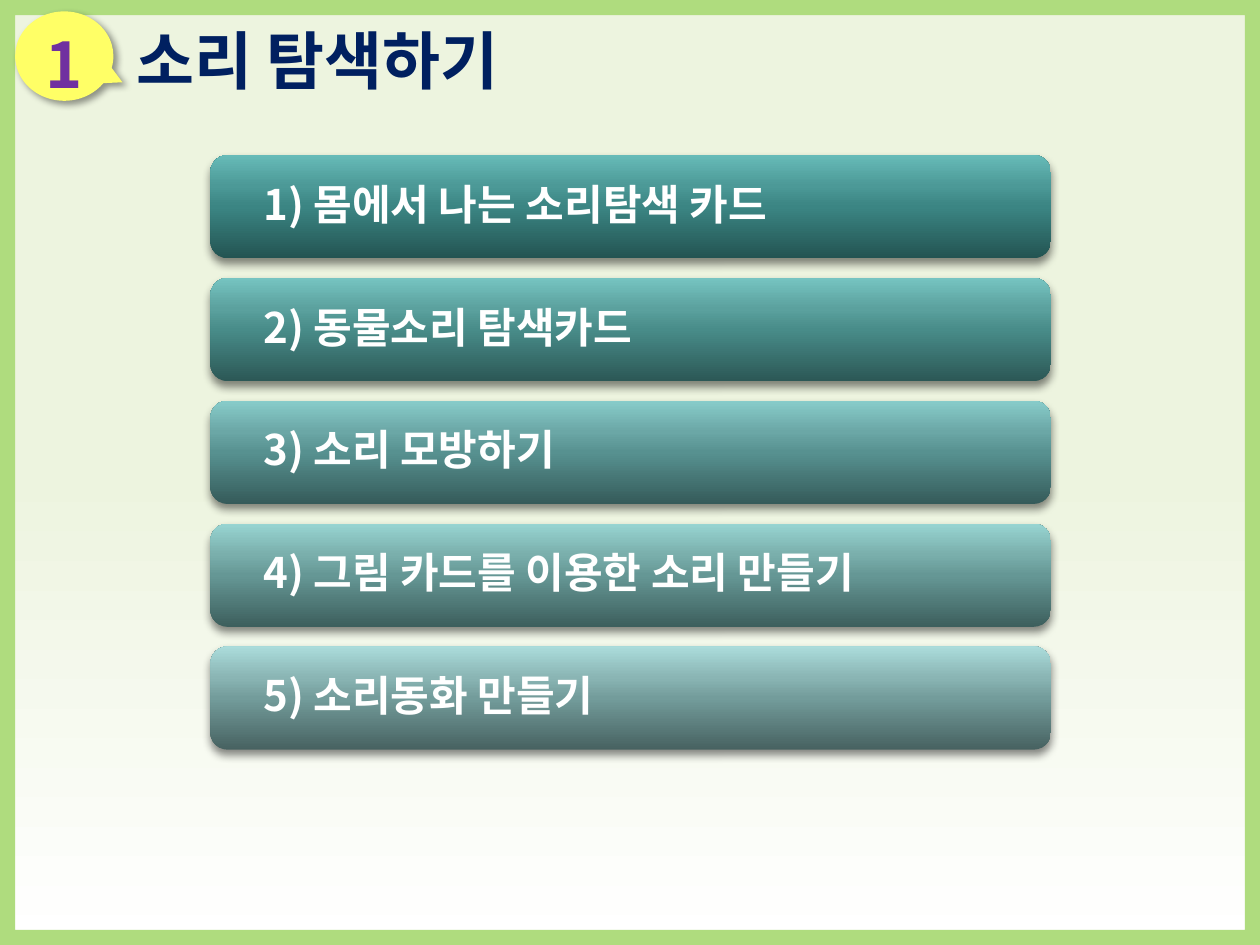
import pptx
import pptx.util
import pptx.dml.color
import pptx.enum.shapes
import pptx.enum.text
import pptx.oxml
import pptx.oxml.ns
from lxml import etree

Inches = pptx.util.Inches
SHAPE = pptx.enum.shapes.MSO_SHAPE
ALIGN = pptx.enum.text.PP_ALIGN
FONT = "Noto Sans CJK KR"
COLORS = {"white": "FFFFFF", "mist": "EDF4DF", "frame": "AFDC7E", "navy": "002060",
          "yellow": "FFFF66", "purple": "7030A0", "shadow": "000000"}

# Each bar: its text and its gradient from bottom to top
STOPS = (0, 50, 70, 100)
BARS = [
    ("1) 몸에서 나는 소리탐색 카드", ("235452", "3B8583", "4C9997", "67BBB8")),
    ("2) 동물소리 탐색카드", ("2C5856", "488C89", "5BA19E", "76C4C1")),
    ("3) 소리 모방하기", ("355B5A", "579190", "6BA7A6", "88CCCA")),
    ("4) 그림 카드를 이용한 소리 만들기", ("3D5F5D", "659795", "7AAFAC", "98D5D2")),
    ("5) 소리동화 만들기", ("476261", "739C9B", "8AB5B4", "ABDCDB")),
]


def add_shape(kind, left, top, width, height, stops, shadow=None):
    """Add a lineless shape with an upward gradient or, for one stop, a solid fill."""
    shape = page.shapes.add_shape(kind, Inches(left), Inches(top), Inches(width), Inches(height))
    shape.line.fill.background()
    shape.shadow.inherit = False
    if len(stops) == 1:
        shape.fill.solid()
        shape.fill.fore_color.rgb = pptx.dml.color.RGBColor.from_string(stops[0][1])
    else:
        marks = "".join(f'<a:gs pos="{place * 1000}"><a:srgbClr val="{color}"/></a:gs>'
                        for place, color in stops)
        gradient = pptx.oxml.parse_xml(
            f'<a:gradFill {pptx.oxml.ns.nsdecls("a")} rotWithShape="1"><a:gsLst>{marks}</a:gsLst>'
            '<a:lin ang="16200000" scaled="0"/></a:gradFill>')
        shape._element.spPr.find(pptx.oxml.ns.qn("a:prstGeom")).addnext(gradient)
    if shadow:
        opacity, blur, distance, angle = shadow
        effects = shape._element.spPr.find(pptx.oxml.ns.qn("a:effectLst"))
        effects.append(pptx.oxml.parse_xml(
            f'<a:outerShdw {pptx.oxml.ns.nsdecls("a")} blurRad="{pptx.util.Pt(blur)}" '
            f'dist="{pptx.util.Pt(distance)}" dir="{angle * 60000}" algn="ctr" rotWithShape="0">'
            f'<a:srgbClr val="{COLORS["shadow"]}"><a:alpha val="{opacity * 1000}"/></a:srgbClr>'
            '</a:outerShdw>'))
    return shape


def write(shape, text, size, color, align, spacing, wrap=False):
    """Write one bold, vertically centred paragraph."""
    frame = shape.text_frame
    frame.word_wrap = wrap
    frame.auto_size = pptx.enum.text.MSO_AUTO_SIZE.NONE
    frame.vertical_anchor = pptx.enum.text.MSO_ANCHOR.MIDDLE
    frame.text = text
    para = frame.paragraphs[0]
    para.alignment = align
    para.line_spacing = spacing
    para.space_before = pptx.util.Pt(0)
    font = para.font
    font.size = pptx.util.Pt(size)
    font.bold = True
    font.color.rgb = pptx.dml.color.RGBColor.from_string(COLORS[color])
    font.name = FONT
    # Korean glyphs take the East Asian typeface
    etree.SubElement(font._element, pptx.oxml.ns.qn("a:ea"), typeface=FONT)


deck = pptx.Presentation()
deck.slide_width, deck.slide_height = Inches(10), Inches(7.5)
page = deck.slides.add_slide(deck.slide_layouts[5])

# Background and frame
add_shape(SHAPE.RECTANGLE, 0, 0, 10, 7.5, [(0, COLORS["white"]), (50, COLORS["mist"])])
border = add_shape(SHAPE.FRAME, 0, 0, 10, 7.5, [(0, COLORS["frame"])])
border.adjustments[0] = 0.016

# Title, brought in front of the background
title = page.shapes.title
title.left, title.top = Inches(0.98), Inches(0.09)
title.width, title.height = Inches(8.9), Inches(0.76)
write(title, "소리 탐색하기", 36, "navy", ALIGN.LEFT, 1.0)
page.shapes._spTree.append(title._element)

# Number balloon
balloon = add_shape(SHAPE.OVAL_CALLOUT, 0.12, 0.09, 0.78, 0.71, [(0, COLORS["yellow"])],
                    shadow=(40, 4, 3, 45))
balloon.adjustments[0], balloon.adjustments[1] = 0.592, 0.293
inner = balloon.text_frame
inner.margin_left = inner.margin_right = inner.margin_top = inner.margin_bottom = Inches(0.04)
write(balloon, "1", 36, "purple", ALIGN.CENTER, 1.2, wrap=True)

# Activity bars
bar_left, first_top, bar_width, bar_height, pitch = 1.67, 1.23, 6.67, 0.82, 0.975
for row, (text, shades) in enumerate(BARS):
    bar = add_shape(SHAPE.ROUNDED_RECTANGLE, bar_left, first_top + row * pitch,
                    bar_width, bar_height, list(zip(STOPS, shades)), shadow=(45, 5, 3, 90))
    bar.text_frame.margin_left = Inches(0.38)
    write(bar, text, 24, "white", ALIGN.LEFT, 0.9)

deck.save("out.pptx")
